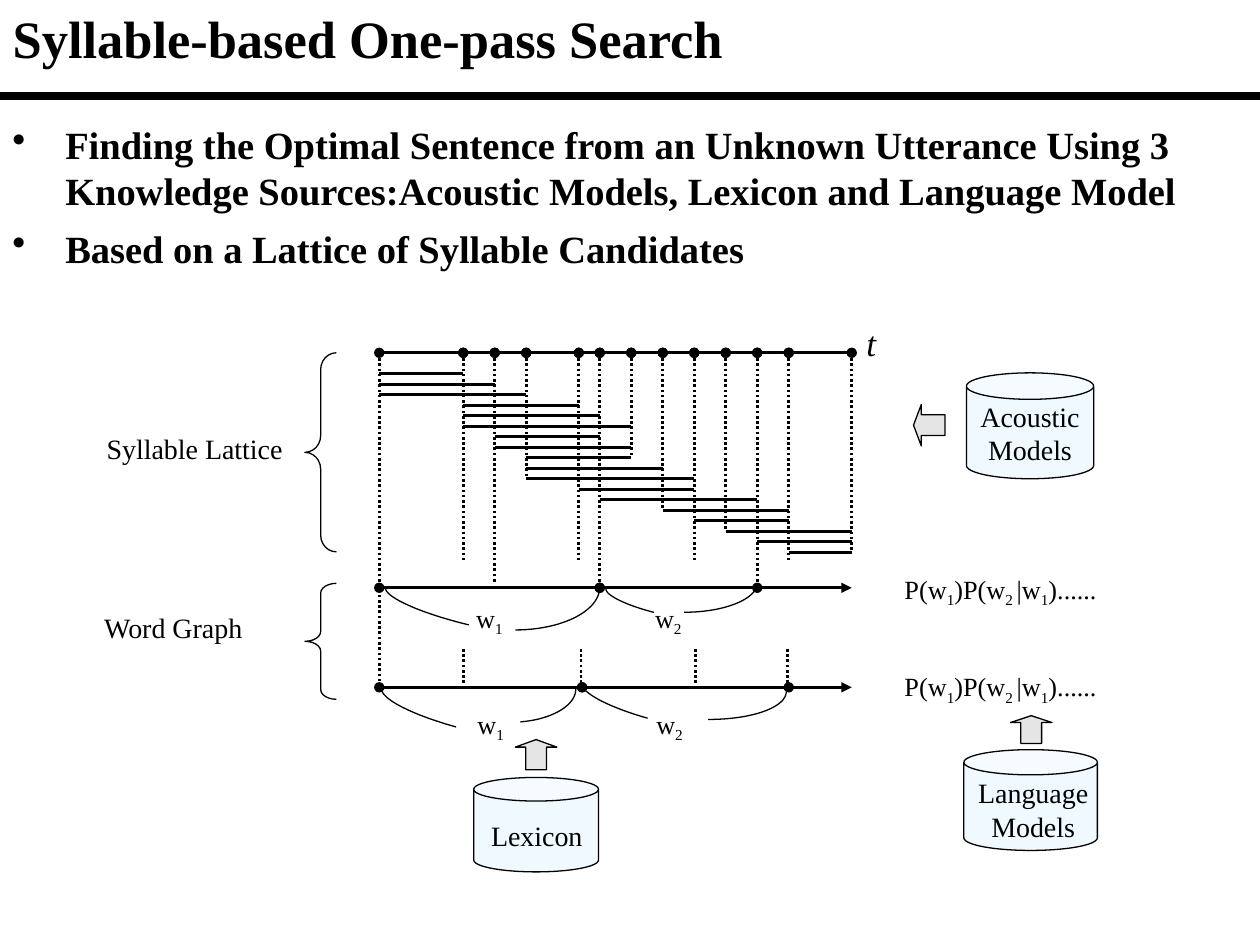
from pptx import Presentation
from pptx.dml.color import RGBColor
from pptx.enum.dml import MSO_LINE
from pptx.enum.shapes import MSO_CONNECTOR, MSO_SHAPE
from pptx.enum.text import MSO_ANCHOR, MSO_AUTO_SIZE, PP_ALIGN
from pptx.oxml.ns import qn
from pptx.util import Inches, Pt
from lxml import etree

FONT = "Times New Roman"
BLACK, PALE_BLUE, GRAY = "000000", "CCECFF", "C0C0C0"
LEFT, CENTER = PP_ALIGN.LEFT, PP_ALIGN.CENTER
CAN, BRACE = MSO_SHAPE.CAN, MSO_SHAPE.LEFT_BRACE
UP, BACK = MSO_SHAPE.UP_ARROW, MSO_SHAPE.LEFT_ARROW
DOTTED = MSO_LINE.ROUND_DOT

GRID_LEFT, GRID_TOP, STEP = 3.01, 2.8, 1 / 12
DROPS = {0: 31.5, 8: 20, 11: 22, 14: 12, 19: 20, 21: 22, 24: 10,
         27: 15, 30: 20, 33: 17, 36: 22, 39: 20, 45: 19}
SYLLABLES = [(0, 8), (0, 11), (0, 14), (8, 19), (8, 21), (8, 24),
             (11, 21), (11, 24), (14, 24), (14, 27), (14, 30), (19, 30),
             (21, 36), (27, 39), (30, 39), (33, 45), (36, 45), (39, 45)]
WORD_PATHS = [(4.665, (3.01, 4.76, 6.01, 6.76)),
              (5.455, (3.01, 4.62, 6.26, 6.76))]
WORD_ARCS = [
    [(3.06, 4.66), (3.04, 4.73), (3.31, 4.86), (3.72, 4.96)],
    [(4.76, 4.66), (4.76, 4.85), (4.46, 5), (4.09, 5)],
    [(4.81, 4.67), (4.8, 4.72), (4.96, 4.8), (5.19, 4.86)],
    [(6.01, 4.63), (6.01, 4.75), (5.76, 4.86), (5.43, 4.86)],
    [(3.03, 5.46), (3.01, 5.54), (3.26, 5.67), (3.62, 5.77)],
    [(4.57, 5.47), (4.57, 5.6), (4.38, 5.71), (4.13, 5.73)],
    [(4.62, 5.42), (4.6, 5.49), (4.82, 5.61), (5.14, 5.7)],
    [(6.24, 5.49), (6.24, 5.61), (5.98, 5.71), (5.62, 5.71)],
]
WORDS = [("w", 0), ("1", -25), ("\t", 0), ("w", 0), ("2", -25)]
PROBABILITY = [("P(w", 0), ("1", -25), (")P(w", 0), ("2 ", -25),
               ("|w", 0), ("1", -25), (")......", 0)]


def color(value):
    return RGBColor.from_string(value)


def column(index):
    return GRID_LEFT + index * STEP


def row(index):
    return GRID_TOP + index * STEP


def add_run(paragraph, text, size, bold=False, italic=False, baseline=0):
    run = paragraph.add_run()
    run.text = text
    run.font.name = FONT
    run.font.size = Pt(size)
    run.font.bold = bold
    run.font.italic = italic
    run.font.color.rgb = color(BLACK)
    if baseline:
        run.font._element.set("baseline", str(baseline * 1000))


def add_box(slide, box, paragraphs, size, align=LEFT, gap=0, **style):
    shape = slide.shapes.add_textbox(*map(Inches, box))
    frame = shape.text_frame
    frame.word_wrap = True
    for index, runs in enumerate(paragraphs):
        paragraph = frame.add_paragraph() if index else frame.paragraphs[0]
        paragraph.alignment = align
        if index:
            paragraph.space_before = Pt(gap)
        for text, baseline in runs:
            add_run(paragraph, text, size, baseline=baseline, **style)
    return frame


def add_label(slide, box, text, size=16, **style):
    add_box(slide, box, [[(text, 0)]], size, CENTER, **style)


def add_title(slide, text):
    title = slide.shapes.title
    title.left, title.top, title.width, title.height = map(Inches, (0, 0, 10, 0.6))
    frame = title.text_frame
    frame.auto_size = MSO_AUTO_SIZE.NONE
    frame.vertical_anchor = MSO_ANCHOR.TOP
    paragraph = frame.paragraphs[0]
    paragraph.alignment = LEFT
    add_run(paragraph, text, 30, bold=True)


def add_bullets(slide, box, texts):
    frame = add_box(slide, box, [[(text, 0)] for text in texts], 22, gap=6.6, bold=True)
    for paragraph in frame.paragraphs:
        properties = paragraph._p.get_or_add_pPr()
        properties.set("marL", str(Inches(0.42)))
        properties.set("indent", str(-Inches(0.42)))
        etree.SubElement(properties, qn("a:buChar"), char="•")


def add_word_pair(slide, left, top):
    frame = add_box(slide, (left, top, 2.08, 0.35), [WORDS], 15)
    properties = frame.paragraphs[0]._p.get_or_add_pPr()
    tabs = etree.SubElement(properties, qn("a:tabLst"))
    etree.SubElement(tabs, qn("a:tab"), pos=str(Inches(1.42)), algn="l")


def add_line(slide, start, end, width=1.5, dash=None, head=None, tail=None):
    line = slide.shapes.add_connector(MSO_CONNECTOR.STRAIGHT, *map(Inches, (*start, *end)))
    line.line.color.rgb = color(BLACK)
    line.line.width = Pt(width)
    if dash:
        line.line.dash_style = dash
    outline = line.line._get_or_add_ln()
    for tag, kind in (("a:headEnd", head), ("a:tailEnd", tail)):
        if kind:
            etree.SubElement(outline, qn(tag), type=kind)
    etree.SubElement(line._element.spPr, qn("a:effectLst"))


def outline_shape(shape, fill=None, opacity=100):
    shape.shadow.inherit = False
    shape.line.color.rgb = color(BLACK)
    shape.line.width = Pt(0.75)
    if fill is None:
        shape.fill.background()
        return
    shape.fill.solid()
    shape.fill.fore_color.rgb = color(fill)
    value = shape._element.spPr.find(qn("a:solidFill"))[0]
    etree.SubElement(value, qn("a:alpha"), val=str(opacity * 1000))


def add_preset(slide, kind, box, adjustments, fill=None, opacity=100):
    shape = slide.shapes.add_shape(kind, *map(Inches, box))
    for index, value in enumerate(adjustments):
        shape.adjustments[index] = value
    outline_shape(shape, fill, opacity)


def add_arc(slide, controls, pieces=24):
    points = []
    for index in range(pieces + 1):
        t = index / pieces
        weights = ((1 - t) ** 3, 3 * t * (1 - t) ** 2, 3 * t * t * (1 - t), t ** 3)
        points.append(tuple(Inches(sum(weight * point[axis]
                                       for weight, point in zip(weights, controls)))
                            for axis in (0, 1)))
    builder = slide.shapes.build_freeform(*points[0])
    builder.add_line_segments(points[1:], close=False)
    outline_shape(builder.convert_to_shape())


def add_lattice(slide):
    nodes = list(DROPS)
    for start, end in zip(nodes, nodes[1:]):
        add_line(slide, (column(start), row(0)), (column(end), row(0)), head="oval", tail="oval")
    for node, depth in DROPS.items():
        add_line(slide, (column(node), row(0)), (column(node), row(depth)), dash=DOTTED)
    for level, (start, end) in enumerate(SYLLABLES, 2):
        add_line(slide, (column(start), row(level)), (column(end), row(level)), width=1.8)


def add_word_graph(slide):
    for y, nodes in WORD_PATHS:
        for start, end in zip(nodes[:-2], nodes[1:-1]):
            add_line(slide, (start, y), (end, y), head="oval", tail="oval")
        add_line(slide, (nodes[-2], y), (nodes[-1], y), tail="triangle")
    for x in (3.68, 4.61, 5.52, 6.25):
        add_line(slide, (x, 5.15), (x, 5.44), dash=DOTTED)
    for controls in WORD_ARCS:
        add_arc(slide, controls)
    add_word_pair(slide, 3.68, 4.73)
    add_word_pair(slide, 3.69, 5.57)
    add_box(slide, (7.08, 4.5, 1.92, 1.11), [PROBABILITY, PROBABILITY], 15, gap=35)


def add_sources(slide):
    for box, label_box, text in [
        ((7.67, 2.96, 1.01, 0.84), (7.67, 3.12, 1.01, 0.64), "Acoustic Models"),
        ((7.65, 5.95, 1.06, 0.8), (7.63, 6.11, 1.14, 0.64), "Language Models"),
        ((3.76, 6.17, 0.99, 0.75), (3.75, 6.45, 1.02, 0.37), "Lexicon"),
    ]:
        add_preset(slide, CAN, box, [0.25], PALE_BLUE, 30)
        add_label(slide, label_box, text)
    for kind, box in [(BACK, (7.25, 3.21, 0.25, 0.33)), (UP, (8.02, 5.68, 0.33, 0.22)),
                      (UP, (4.09, 5.87, 0.33, 0.24))]:
        add_preset(slide, kind, box, [0.5, 0.25], GRAY, 40)


def main():
    presentation = Presentation()
    presentation.slide_width, presentation.slide_height = Inches(10), Inches(7.5)
    slide = presentation.slides.add_slide(presentation.slide_layouts[5])
    add_title(slide, "Syllable-based One-pass Search")
    add_line(slide, (0, 0.76), (10, 0.76), width=4.5)
    add_bullets(slide, (0, 0.91, 9.87, 1.31), [
        "Finding the Optimal Sentence from an Unknown Utterance Using 3 "
        "Knowledge Sources:Acoustic Models, Lexicon and Language Model",
        "Based on a Lattice of Syllable Candidates"])
    add_preset(slide, BRACE, (2.42, 2.8, 0.25, 1.58), [0.53, 0.5])
    add_preset(slide, BRACE, (2.42, 4.63, 0.25, 0.92), [0.31, 0.5])
    add_label(slide, (0.67, 3.38, 1.75, 0.37), "Syllable Lattice")
    add_label(slide, (0.5, 4.8, 1.75, 0.37), "Word Graph")
    add_lattice(slide)
    add_label(slide, (6.58, 2.5, 0.67, 0.43), "t", size=20, italic=True)
    add_word_graph(slide)
    add_sources(slide)
    presentation.save("out.pptx")


if __name__ == "__main__":
    main()
